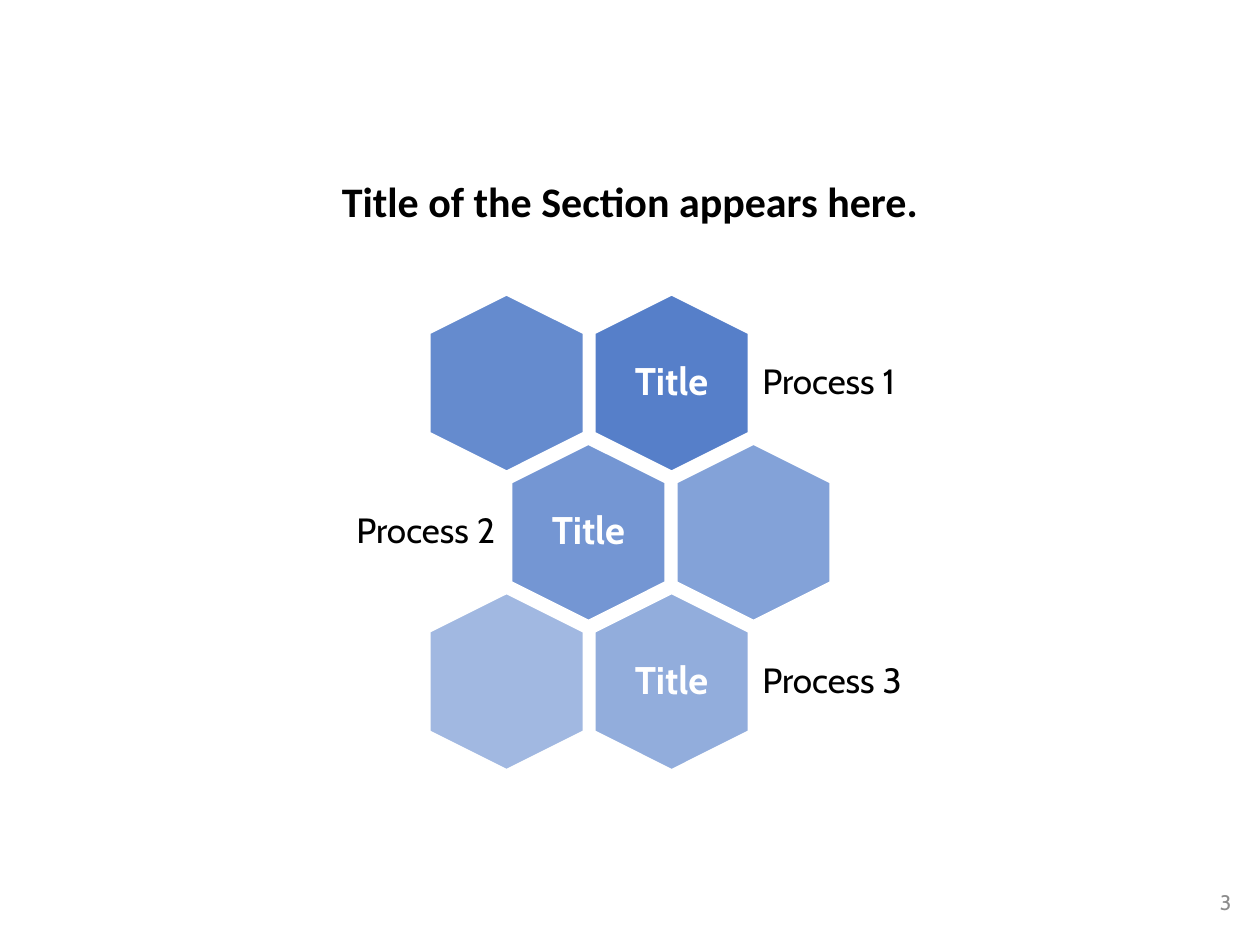
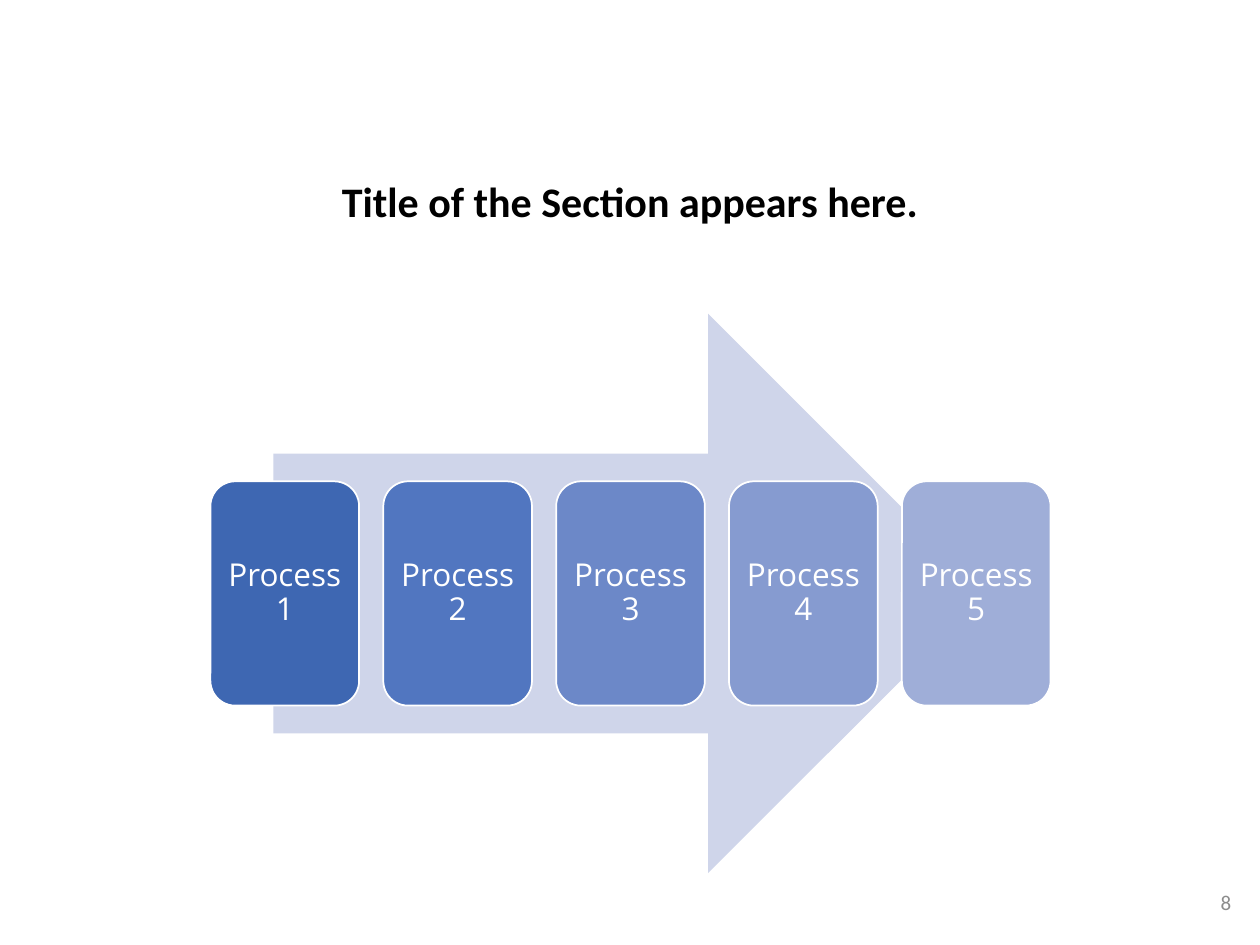
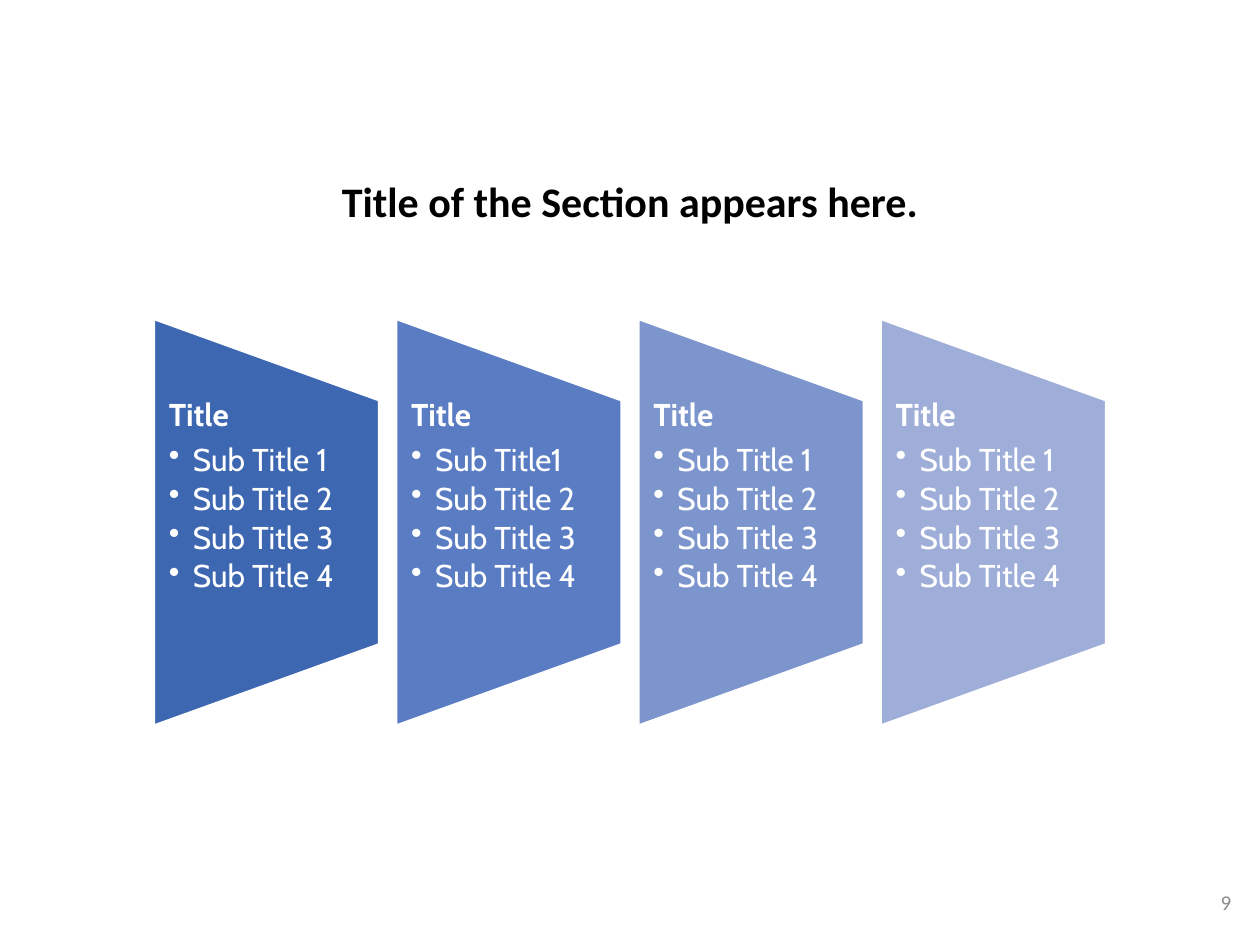
"""Build three process slides: hexagons, an arrow and trapezoid columns."""
from lxml import etree
from pptx import Presentation
from pptx.dml.color import RGBColor
from pptx.enum import shapes, text
from pptx.oxml import ns
from pptx.util import Inches, Pt

WHITE = RGBColor(0xFF, 0xFF, 0xFF)
BLACK = RGBColor(0x00, 0x00, 0x00)
GREY = RGBColor(0x8C, 0x8C, 0x8C)
BLUE = RGBColor(0x44, 0x72, 0xC4)
PALE = RGBColor(0xCF, 0xD5, 0xEA)
STEP_BLUES = [RGBColor(0x3E, 0x67, 0xB2), RGBColor(0x51, 0x76, 0xC0), RGBColor(0x6C, 0x88, 0xC8),
              RGBColor(0x86, 0x9B, 0xD0), RGBColor(0x9F, 0xAE, 0xD8)]
COLUMN_BLUES = [RGBColor(0x3E, 0x67, 0xB2), RGBColor(0x5A, 0x7C, 0xC3),
                RGBColor(0x7D, 0x95, 0xCD), RGBColor(0x9F, 0xAE, 0xD8)]
LEFT, CENTER, RIGHT = text.PP_ALIGN.LEFT, text.PP_ALIGN.CENTER, text.PP_ALIGN.RIGHT
TOP, MIDDLE = text.MSO_ANCHOR.TOP, text.MSO_ANCHOR.MIDDLE


def add_filled(s, preset, left, top, width, height, color, line=None):
    sp = s.shapes.add_shape(preset, Inches(left), Inches(top), Inches(width), Inches(height))
    sp.shadow.inherit = False
    sp.fill.solid()
    sp.fill.fore_color.rgb = color
    if line:
        sp.line.color.rgb = WHITE
        sp.line.width = Pt(line)
    else:
        sp.line.fill.background()
    return sp


def write(sp, lines, font, size, color, align=CENTER, anchor=MIDDLE, inset=(0.1, 0.05),
          bold=False, spacing=0.9):
    tf = sp.text_frame
    tf.word_wrap = True
    tf.vertical_anchor = anchor
    tf.margin_left = tf.margin_right = Inches(inset[0])
    tf.margin_top = tf.margin_bottom = Inches(inset[1])
    for i, line in enumerate(lines):
        p = tf.add_paragraph() if i else tf.paragraphs[0]
        p.alignment = align
        p.line_spacing = spacing
        if len(lines) > 1:
            p.space_after = Pt(2.7 if i else 6.3)
        if i:
            pPr = p._p.get_or_add_pPr()
            pPr.set("marL", str(Inches(0.19)))
            pPr.set("indent", str(-Inches(0.19)))
            etree.SubElement(pPr, ns.qn("a:buChar"), char="•")
        r = p.add_run()
        r.text = line
        r.font.name = font
        r.font.size = Pt(size)
        r.font.bold = bold and i == 0
        r.font.color.rgb = color


prs = Presentation()
prs.slide_width, prs.slide_height = Inches(10), Inches(7.5)

slides = []
for number, font in [("3", "Cabin"), ("8", "Calibri"), ("9", "Calibri")]:
    s = prs.slides.add_slide(prs.slide_layouts[6])
    box = s.shapes.add_textbox(Inches(1.81), Inches(1.39), Inches(6.38), Inches(0.79))
    write(box, ["Title of the Section appears here."], "Calibri", 24, BLACK, anchor=TOP, bold=True)
    box = s.shapes.add_textbox(Inches(7.62), Inches(6.96), Inches(2.25), Inches(0.4))
    write(box, [number], font, 12, GREY, RIGHT, spacing=1)
    slides.append(s)
honeycomb, arrow, columns = slides

hexagons = [
    (4.63, 0, 90, "Process 1", 5.97, 1.56, LEFT),
    (3.32, 0, 82, None, None, None, None),
    (3.97, 1, 74, "Process 2", 2.5, 1.51, RIGHT),
    (5.28, 1, 66, None, None, None, None),
    (4.63, 2, 58, "Process 3", 5.97, 1.56, LEFT),
    (3.32, 2, 50, None, None, None, None),
]
for left, row, opacity, label, label_left, label_width, align in hexagons:
    top = 2.43 + row * 1.185
    sp = add_filled(honeycomb, shapes.MSO_SHAPE.HEXAGON, left, top, 1.4, 1.22, BLUE, 1)
    sp.rotation = 90
    sp.adjustments[0] = 0.25
    rgb = sp.fill._xPr.find(ns.qn("a:solidFill"))[0]
    etree.SubElement(rgb, ns.qn("a:alpha"), val=str(opacity * 1000))
    if label:
        box = honeycomb.shapes.add_textbox(Inches(left + 0.28), Inches(top + 0.13),
                                           Inches(0.84), Inches(0.96))
        write(box, ["Title"], "Cabin", 22, WHITE, inset=(0.09, 0.09), bold=True)
        box = honeycomb.shapes.add_textbox(Inches(label_left), Inches(top + 0.19),
                                           Inches(label_width), Inches(0.84))
        write(box, [label], "Cabin", 20, BLACK, align, inset=(0.08, 0.08))

add_filled(arrow, shapes.MSO_SHAPE.RIGHT_ARROW, 2.17, 2.49, 5.67, 4.44, PALE)
for i, color in enumerate(STEP_BLUES):
    sp = add_filled(arrow, shapes.MSO_SHAPE.ROUNDED_RECTANGLE, 1.67 + i * 1.372, 3.82,
                    1.18, 1.78, color, 1)
    write(sp, [f"Process {i + 1}"], "Open Sans", 18, WHITE, inset=(0.07, 0.07))

for i, color in enumerate(COLUMN_BLUES):
    left = 0.5 + i * 1.923
    sp = add_filled(columns, shapes.MSO_SHAPE.FLOWCHART_MANUAL_OPERATION, left, 3.25,
                    3.23, 1.79, color, 1.5)
    sp.rotation = 270
    box = columns.shapes.add_textbox(Inches(left + 0.72), Inches(3.17), Inches(1.79), Inches(1.94))
    first = "Sub Title1" if i == 1 else "Sub Title 1"
    write(box, ["Title", first, "Sub Title 2", "Sub Title 3", "Sub Title 4"], "Cabin", 18, WHITE,
          LEFT, TOP, inset=(0.12, 0), bold=True)

prs.save("out.pptx")
